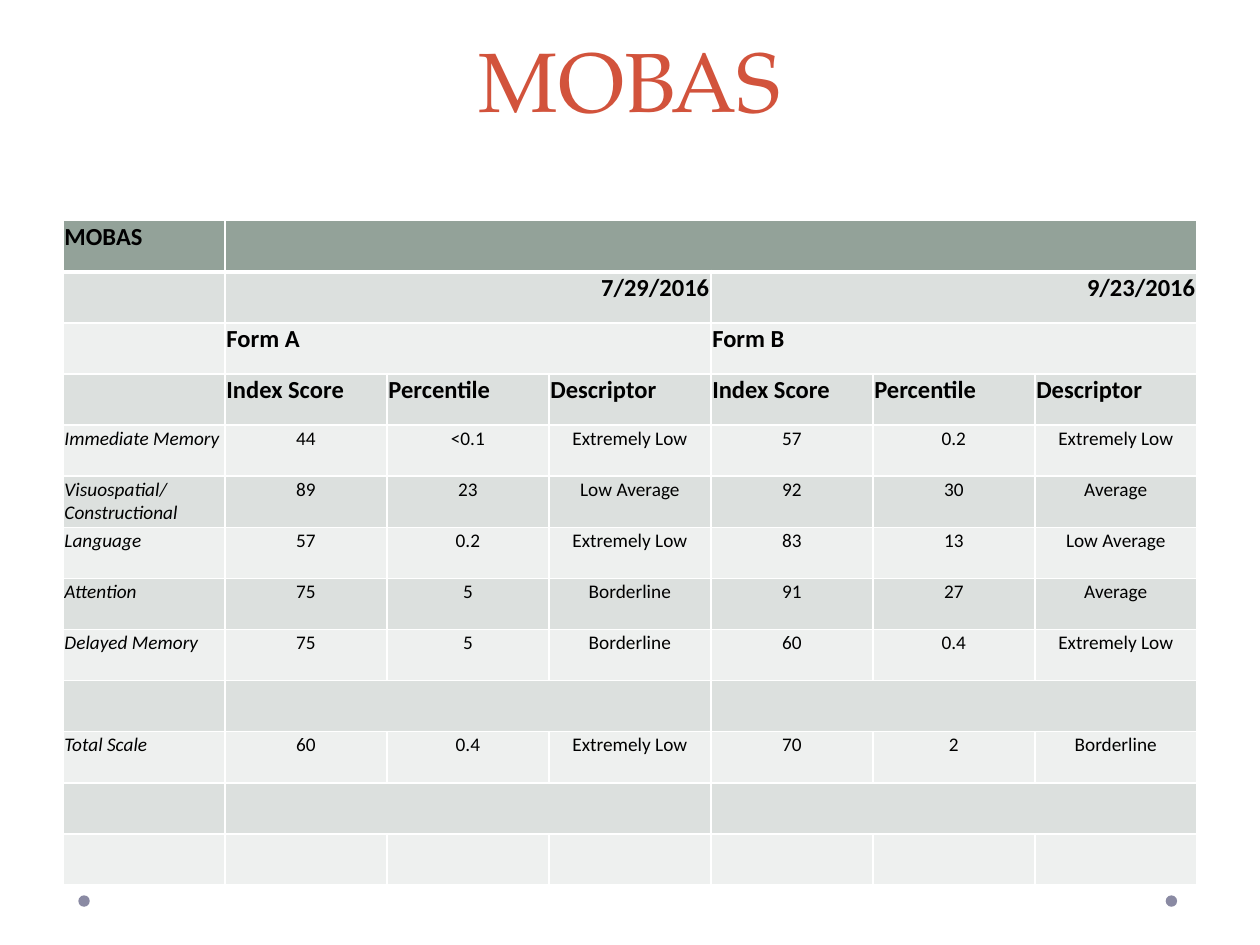
"""Build the MOBAS score comparison slide."""
from lxml import etree
from pptx import Presentation
from pptx.dml.color import RGBColor
from pptx.enum.shapes import MSO_SHAPE
from pptx.enum.text import MSO_ANCHOR, PP_ALIGN
from pptx.oxml.ns import qn
from pptx.util import Cm, Pt

LEFT, MID, RIGHT = PP_ALIGN.LEFT, PP_ALIGN.CENTER, PP_ALIGN.RIGHT
BOTTOM = MSO_ANCHOR.BOTTOM
OVAL = MSO_SHAPE.OVAL


class Theme:
    title = RGBColor.from_string("D2533C")
    ink = RGBColor.from_string("000000")
    dot = RGBColor.from_string("8A8AA3")
    head = RGBColor.from_string("93A299")
    bands = [RGBColor.from_string("EEF0EF"), RGBColor.from_string("DCE0DE")]
    rule = "FFFFFF"
    serif, sans = "TeX Gyre Pagella", "Calibri"
    big, label, small = Pt(48), Pt(14), Pt(11)
    leading = Pt(58)
    thin, thick = Pt(1), Pt(3)


def write(para, text, align, style, color):
    para.alignment = align
    run = para.add_run()
    run.text = text
    for name, value in style.items():
        setattr(run.font, name, value)
    run.font.color.rgb = color


def edge(cell, side, width):
    line = etree.SubElement(cell._tc.get_or_add_tcPr(), qn(f"a:{side}"), w=str(width))
    fill = etree.SubElement(line, qn("a:solidFill"))
    etree.SubElement(fill, qn("a:srgbClr"), val=Theme.rule)


TITLE = {"name": Theme.serif, "size": Theme.big, "bold": False}
HEAD = {"name": Theme.sans, "size": Theme.label, "bold": True}
SCORE = {"name": Theme.sans, "size": Theme.small, "bold": False}
NAME = {**SCORE, "italic": True}
INSET = {"margin_left": Cm(0.03), "margin_right": Cm(0.03),
         "margin_top": Cm(0.03), "margin_bottom": Cm(0)}

FIELDS = ["Index Score", "Percentile", "Descriptor"]
ROWS = [
    ["MOBAS"],
    ["", "7/29/2016", "", "", "9/23/2016"],
    ["", "Form A", "", "", "Form B"],
    ["", *FIELDS, *FIELDS],
    ["Immediate Memory", "44", "<0.1", "Extremely Low", "57", "0.2", "Extremely Low"],
    ["Visuospatial/Constructional", "89", "23", "Low Average", "92", "30", "Average"],
    ["Language", "57", "0.2", "Extremely Low", "83", "13", "Low Average"],
    ["Attention", "75", "5", "Borderline", "91", "27", "Average"],
    ["Delayed Memory", "75", "5", "Borderline", "60", "0.4", "Extremely Low"],
    [],
    ["Total Scale", "60", "0.4", "Extremely Low", "70", "2", "Borderline"],
    [],
    [],
]
COLS = 7
HALVES = [(1, 3), (4, 6)]
MERGES = {0: [(1, 6)], 1: HALVES, 2: HALVES, 9: HALVES, 11: HALVES}
DATES, FIRST = 1, 4

deck = Presentation()
deck.slide_width, deck.slide_height = Cm(25.4), Cm(19.05)
slide = deck.slides.add_slide(deck.slide_layouts[5])

title = slide.shapes.title
title.left, title.top, title.width, title.height = Cm(1.27), Cm(0), Cm(22.86), Cm(2.74)
title.text_frame.vertical_anchor = BOTTOM
para = title.text_frame.paragraphs[0]
para.line_spacing = Theme.leading
write(para, "MOBAS", MID, TITLE, Theme.title)

for left in (23.5, 1.58):
    dot = slide.shapes.add_shape(OVAL, Cm(left), Cm(18.05), Cm(0.23), Cm(0.23))
    dot.shadow.inherit = False
    dot.fill.solid()
    dot.fill.fore_color.rgb = Theme.dot
    dot.line.fill.background()

frame = slide.shapes.add_table(len(ROWS), COLS, Cm(1.27), Cm(4.45), Cm(22.86), Cm(13.39))
table = frame.table
for r, texts in enumerate(ROWS):
    for c in range(COLS):
        cell = table.cell(r, c)
        for name, value in INSET.items():
            setattr(cell, name, value)
        edge(cell, "lnL", Theme.thin)
        edge(cell, "lnR", Theme.thin)
        edge(cell, "lnT", Theme.thick if r == 1 else Theme.thin)
        edge(cell, "lnB", Theme.thick if r == 0 else Theme.thin)
        cell.fill.solid()
        cell.fill.fore_color.rgb = Theme.bands[r % 2] if r else Theme.head
    for first, last in MERGES.get(r, []):
        table.cell(r, first).merge(table.cell(r, last))
    for c, text in enumerate(texts):
        if not text:
            continue
        if r < FIRST:
            style, align = HEAD, RIGHT if r == DATES else LEFT
        else:
            style, align = (SCORE, MID) if c else (NAME, LEFT)
        write(table.cell(r, c).text_frame.paragraphs[0], text, align, style, Theme.ink)

deck.save("out.pptx")
